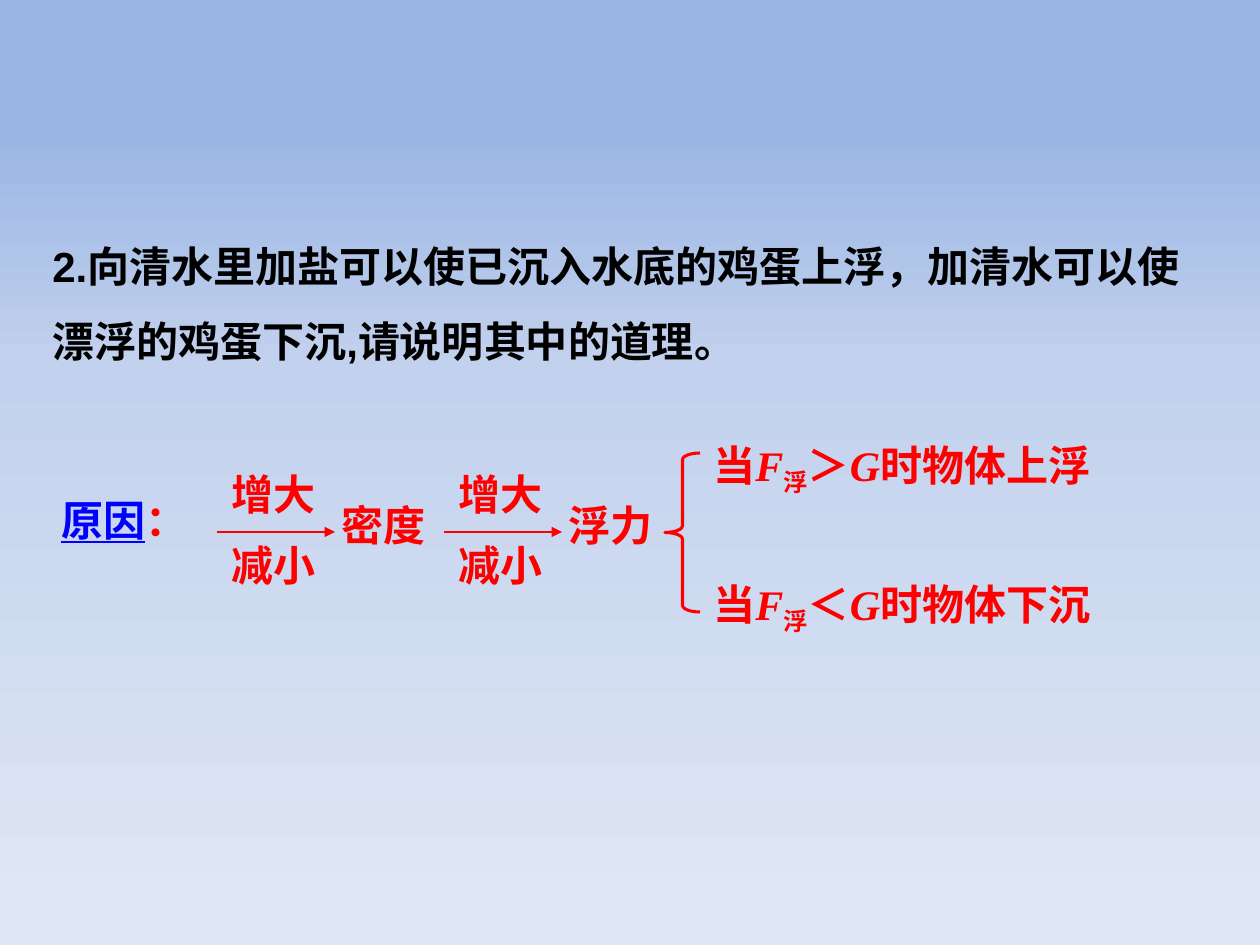
from lxml.etree import SubElement as Sub
from pptx import Presentation
from pptx.dml.color import RGBColor as Rgb
from pptx.enum.shapes import MSO_CONNECTOR as Conn, MSO_SHAPE as Shape
from pptx.oxml.ns import qn
from pptx.util import Pt

PX = 914400 / 126
THEME = {
    "sky": [(13, "9AB5E4"), (39, "C2D1ED"), (100, "E1E8F5")],
    "ink": "000000", "red": "FF0000", "blue": "0000FF",
    "sans": "Arial", "serif": "Times New Roman", "cjk": "Noto Sans CJK SC",
    "size": 24, "thin": 0.75, "thick": 1.75,
}


def px(*vals):
    return [round(v * PX) for v in vals]


def text(box, runs, color=THEME["red"], font=THEME["sans"], gap=1.0):
    """Add a text box; each run is a (words, overrides) pair."""
    frame = slide.shapes.add_textbox(*px(*box)).text_frame
    frame.word_wrap = True
    para = frame.paragraphs[0]
    para.line_spacing = gap
    for words, look in runs:
        run = para.add_run()
        run.text = words
        face = run.font
        face.size, face.bold = Pt(THEME["size"]), True
        face.italic = look.get("italic", False)
        face.underline = look.get("under", False)
        face.color.rgb = Rgb.from_string(look.get("color", color))
        face.name = look.get("font", font)
        props = run._r.get_or_add_rPr()
        Sub(props, qn("a:ea"), typeface=THEME["cjk"])
        if "base" in look:
            props.set("baseline", str(look["base"] * 1000))


deck = Presentation()
deck.slide_width, deck.slide_height = px(1260, 945)
slide = deck.slides.add_slide(deck.slide_layouts[6])

# Background: three-stop gradient, top to bottom
fill = slide.background.fill
fill.gradient()
grad = slide._element.cSld.find(".//" + qn("a:gradFill"))
for part in list(grad):
    grad.remove(part)
stops = Sub(grad, qn("a:gsLst"))
for pos, hue in THEME["sky"]:
    stop = Sub(stops, qn("a:gs"), pos=str(pos * 1000))
    Sub(stop, qn("a:srgbClr"), val=hue)
Sub(grad, qn("a:lin"), ang="5400000", scaled="0")

# Question
text((40, 209, 1162, 165),
     [("2.向清水里加盐可以使已沉入水底的鸡蛋上浮，加清水可以使漂浮的鸡蛋下沉,请说明其中的道理。", {})],
     color=THEME["ink"], gap=1.5)

# Reason label
text((49, 488, 179, 64),
     [("原因", {"color": THEME["blue"], "under": True}), ("：", {})],
     font=THEME["cjk"])

# Two steps: change above and below an arrow, then the quantity
for left, word in ((217, "密度"), (444, "浮力")):
    for top, change in ((462, "增大"), (533, "减小")):
        text((left + 2, top, 129, 63), [(change, {})])
    text((left + 112, 493, 159, 64), [(word, {})])
    arrow = slide.shapes.add_connector(
        Conn.STRAIGHT, *px(left, 532, left + 118, 532))
    arrow.line.color.rgb = Rgb.from_string(THEME["red"])
    arrow.line.width = Pt(THEME["thin"])
    Sub(arrow.line._get_or_add_ln(), qn("a:tailEnd"), type="triangle")
    Sub(arrow._element.spPr, qn("a:effectLst"))

# Brace over the two outcomes
brace = slide.shapes.add_shape(Shape.LEFT_BRACE, *px(665, 453, 35, 159))
brace.adjustments[0], brace.adjustments[1] = 0.19, 0.5
brace.shadow.inherit = False
brace.fill.background()
brace.line.color.rgb = Rgb.from_string(THEME["red"])
brace.line.width = Pt(THEME["thick"])

# Outcomes
math = {"font": THEME["serif"], "italic": True}
for top, sign, end in ((433, "＞", "时物体上浮"), (572, "＜", "时物体下沉")):
    text((701, top, 451, 63),
         [("当", {}), ("F", math), ("浮", {"base": -25}),
          (sign, {}), ("G", math), (end, {})])

deck.save("out.pptx")
